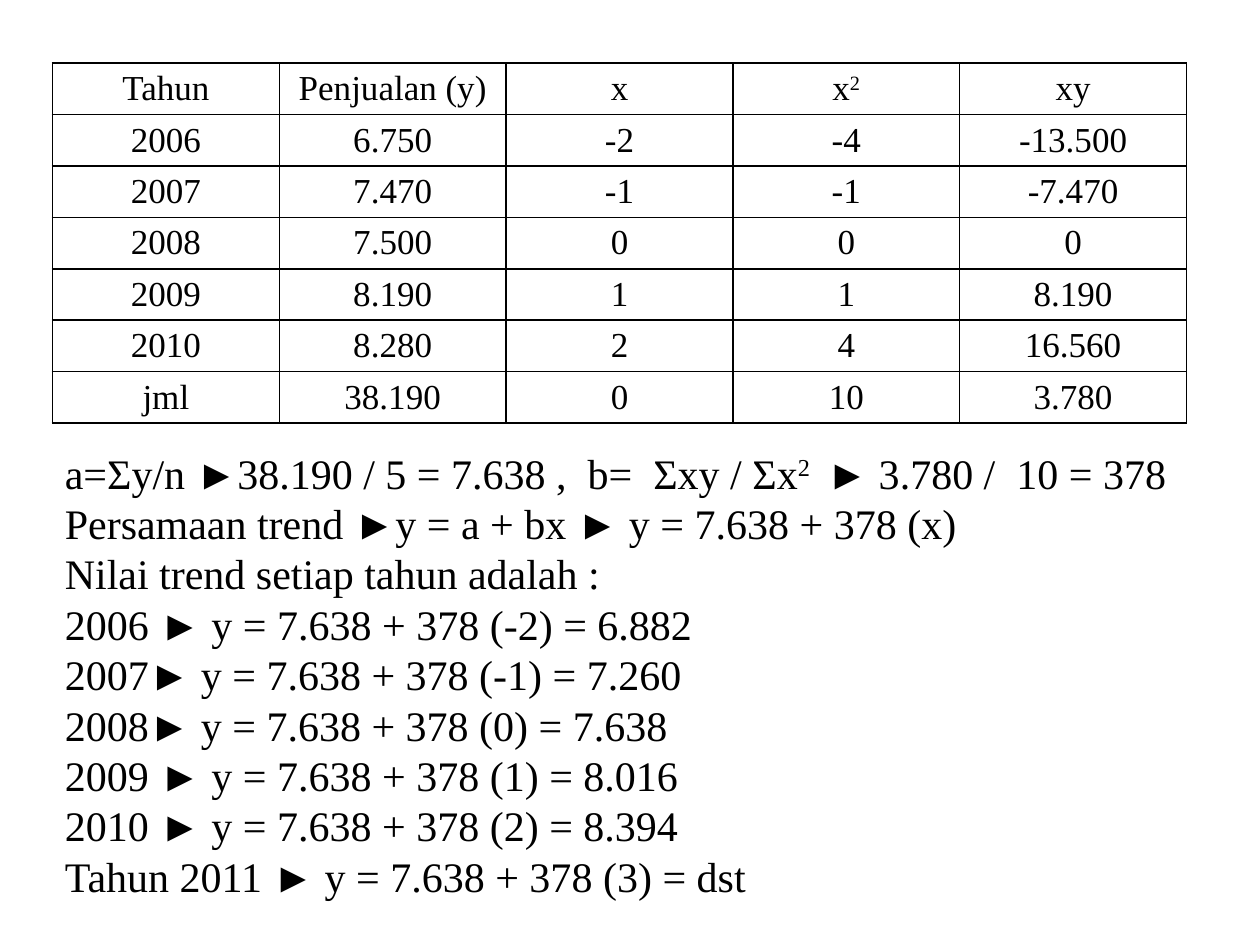
from lxml import etree
from pptx import Presentation
from pptx.dml.color import RGBColor
from pptx.enum.text import MSO_ANCHOR, MSO_AUTO_SIZE, PP_ALIGN
from pptx.oxml.ns import qn
from pptx.util import Pt

CENTER = PP_ALIGN.CENTER
MIDDLE = MSO_ANCHOR.MIDDLE
GROW = MSO_AUTO_SIZE.SHAPE_TO_FIT_TEXT
BLACK = RGBColor(0x00, 0x00, 0x00)
FONT = "Times New Roman"

LEFT = Pt(30)
COLUMN_WIDTH = Pt(129.6)
ROW_HEIGHT = Pt(29.4)

# A text is a list of pieces; every second piece is superscript.
SALES = [
    [["Tahun"], ["Penjualan (y)"], ["x"], ["x", "2"], ["xy"]],
    [["2006"], ["6.750"], ["-2"], ["-4"], ["-13.500"]],
    [["2007"], ["7.470"], ["-1"], ["-1"], ["-7.470"]],
    [["2008"], ["7.500"], ["0"], ["0"], ["0"]],
    [["2009"], ["8.190"], ["1"], ["1"], ["8.190"]],
    [["2010"], ["8.280"], ["2"], ["4"], ["16.560"]],
    [["jml"], ["38.190"], ["0"], ["10"], ["3.780"]],
]
TREND_LINES = [
    ["a=Σy/n ►38.190 / 5 = 7.638 ,  b=  Σxy / Σx", "2 ", " ► 3.780 /  10 = 378"],
    ["Persamaan trend ►y = a + bx ► y = 7.638 + 378 (x)"],
    ["Nilai trend setiap tahun adalah :"],
    ["2006 ► y = 7.638 + 378 (-2) = 6.882"],
    ["2007► y = 7.638 + 378 (-1) = 7.260"],
    ["2008► y = 7.638 + 378 (0) = 7.638"],
    ["2009 ► y = 7.638 + 378 (1) = 8.016"],
    ["2010 ► y = 7.638 + 378 (2) = 8.394"],
    ["Tahun 2011 ► y = 7.638 + 378 (3) = dst"],
]


def add_pieces(paragraph, pieces, size):
    for index, piece in enumerate(pieces):
        run = paragraph.add_run()
        run.text = piece
        run.font.name = FONT
        run.font.size = Pt(size)
        run.font.bold = False
        run.font.color.rgb = BLACK
        if index % 2:
            run.font._element.set("baseline", "30000")


def add_borders(cell):
    properties = cell._tc.get_or_add_tcPr()
    for position, side in enumerate(("a:lnL", "a:lnR", "a:lnT", "a:lnB")):
        line = etree.Element(qn(side), w=str(Pt(1)))
        fill = etree.SubElement(line, qn("a:solidFill"))
        etree.SubElement(fill, qn("a:srgbClr"), val=str(BLACK))
        properties.insert(position, line)


def add_sales_table(slide):
    row_count, column_count = len(SALES), len(SALES[0])
    table = slide.shapes.add_table(
        row_count, column_count, LEFT, Pt(36),
        COLUMN_WIDTH * column_count, ROW_HEIGHT * row_count).table
    table.first_row = False
    table.horz_banding = False
    for column in table.columns:
        column.width = COLUMN_WIDTH
    for row, texts in zip(table.rows, SALES):
        row.height = ROW_HEIGHT
        for cell, pieces in zip(row.cells, texts):
            cell.fill.background()
            cell.margin_top = cell.margin_bottom = Pt(3)
            cell.vertical_anchor = MIDDLE
            paragraph = cell.text_frame.paragraphs[0]
            paragraph.alignment = CENTER
            add_pieces(paragraph, pieces, 20)
            add_borders(cell)


def add_trend_text(slide):
    frame = slide.shapes.add_textbox(LEFT, Pt(252), Pt(654), Pt(268.5)).text_frame
    frame.word_wrap = True
    frame.auto_size = GROW
    for index, pieces in enumerate(TREND_LINES):
        paragraph = frame.add_paragraph() if index else frame.paragraphs[0]
        add_pieces(paragraph, pieces, 24)


def main():
    presentation = Presentation()
    presentation.slide_width, presentation.slide_height = Pt(720), Pt(540)
    slide = presentation.slides.add_slide(presentation.slide_layouts[6])

    # Sales per year with the least-squares columns
    add_sales_table(slide)

    # Trend equation and its yearly values
    add_trend_text(slide)

    presentation.save("out.pptx")


if __name__ == "__main__":
    main()
